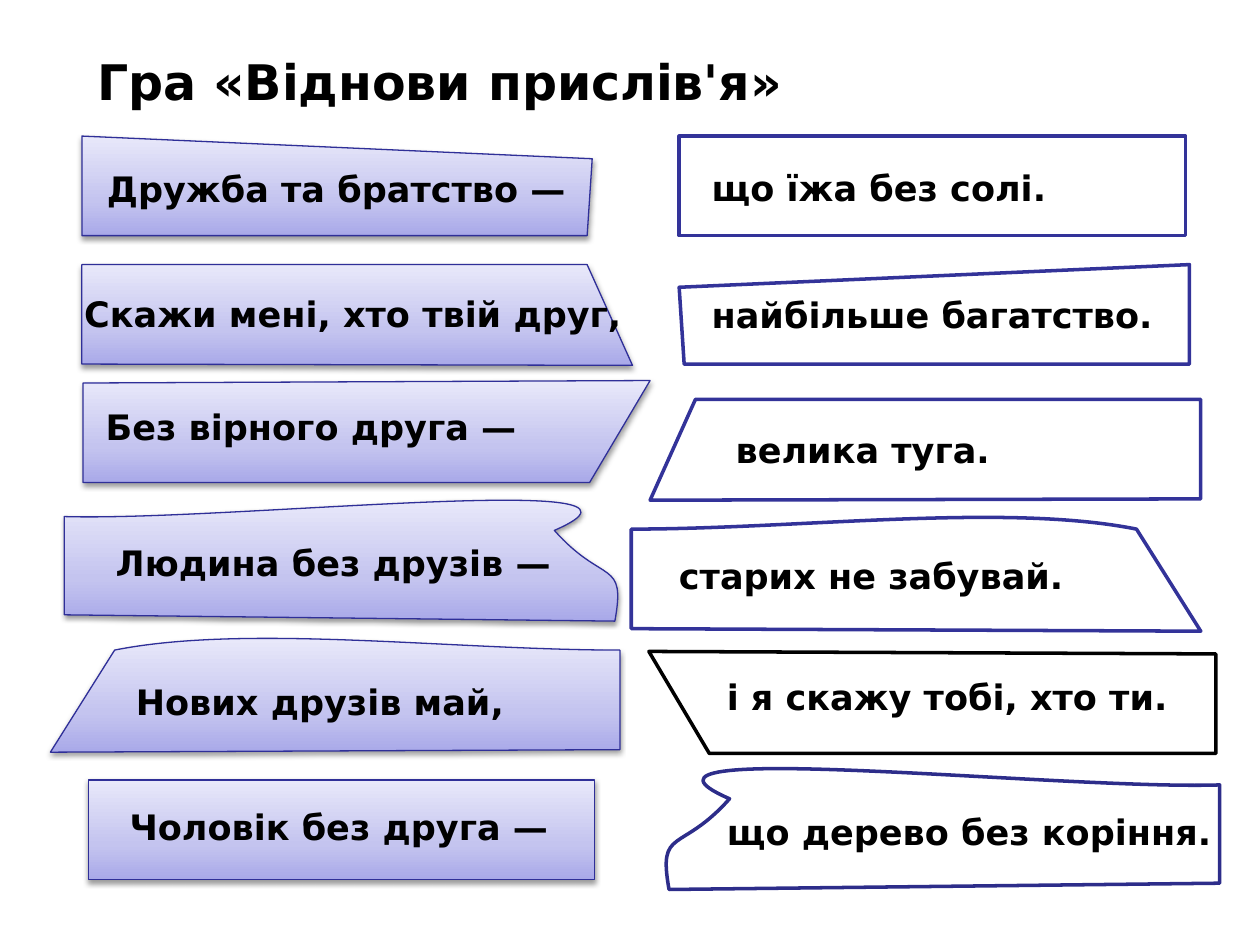
from copy import deepcopy
from dataclasses import dataclass

from lxml import etree
from pptx import Presentation
from pptx.dml.color import RGBColor as Rgb
from pptx.enum.shapes import MSO_SHAPE as Preset
from pptx.enum.text import MSO_ANCHOR as Anchor, MSO_AUTO_SIZE as AutoSize, PP_ALIGN as Align
from pptx.oxml.ns import qn
from pptx.util import Inches, Pt


@dataclass(frozen=True)
class Theme:
    font: str = "DejaVu Sans"
    title_size: int = 28
    label_size: int = 20
    black: str = "000000"
    white: str = "FFFFFF"
    start_edge: str = "2F2F98"
    end_edge: str = "333399"
    torn_edge: str = "2D2D8A"
    gradient: tuple = ((0, "A9A9E9"), (0.35, "C4C4EF"), (1, "E8E8FA"))


THEME = Theme()

# Width, height and steps of each strip, in inches; six numbers make a Bezier curve.
OUTLINES = {
    "slant_top": (4.05, 0.79, [(0, 0), (4.05, 0.18), (4.01, 0.79), (0, 0.79), (0, 0)]),
    "slant_end": (4.37, 0.8, [(0, 0), (4.01, 0), (4.37, 0.8), (0, 0.79), (0, 0)]),
    "pointed": (4.5, 0.81, [(0, 0.02), (4.5, 0), (4.02, 0.81), (0, 0.81), (0, 0.02)]),
    "torn": (4.39, 0.96, [(3.89, 0.24), (5.02, -0.25, 1.3, 0.17, 0, 0.13), (0, 0.91),
                          (4.37, 0.96), (4.46, 0.46, 4.28, 0.68, 3.89, 0.24)]),
    "wavy": (4.52, 0.9, [(4.01, 0.09), (2.96, -0.12, 1.33, 0.09, 0, 0.09), (0, 0.88),
                         (4.52, 0.9), (4.01, 0.09)]),
}
RECT_SIZE = (4.02, 0.79)
LABEL_HEIGHT = 0.44

# Outline, mirrored, strip left and top, wording, label left, top and width
STARTS = [
    ("slant_top", False, 0.65, 1.08, "Дружба та братство —", 0.75, 1.28, 3.99),
    ("slant_end", False, 0.65, 2.1, "Скажи мені, хто твій друг,", 0.57, 2.27, 4.52),
    ("pointed", False, 0.66, 3.02, "Без вірного друга —", 0.74, 3.17, 4),
    ("torn", False, 0.51, 3.97, "Людина без друзів —", 0.82, 4.25, 3.87),
    ("wavy", True, 0.4, 5.07, "Нових друзів май,", 0.98, 5.35, 3.7),
    ("rect", False, 0.7, 6.19, "Чоловік без друга —", 0.93, 6.34, 3.63),
]
ENDINGS = [
    ("rect", False, 5.39, 1.08, "що їжа без солі.", 5.55, 1.27, 3.59),
    ("slant_top", True, 5.39, 2.1, "найбільше багатство.", 5.55, 2.28, 3.86),
    ("slant_end", True, 5.16, 3.17, "велика туга.", 5.74, 3.35, 2.96),
    ("wavy", False, 5.01, 4.11, "старих не забувай.", 5.29, 4.35, 3.85),
    ("pointed", True, 5.15, 5.17, "і я скажу тобі, хто ти.", 5.67, 5.31, 3.98),
    ("torn", True, 5.29, 6.1, "що дерево без коріння.", 5.67, 6.38, 4.13),
]
ENDING_EDGES = {"pointed": THEME.black, "torn": THEME.torn_edge}


def set_place(shape, left, top, width, height):
    place = {"left": left, "top": top, "width": width, "height": height}
    for name, value in place.items():
        setattr(shape, name, Inches(value))


def bend(strip, steps, width, height):
    """Turn the line segments of six-number steps into Bezier curves."""
    path = next(strip.element.spPr.iter(qn("a:path")))
    path.set("w", str(Inches(width)))
    path.set("h", str(Inches(height)))
    for segment, step in zip(list(path), steps):
        for old_point in list(segment):
            segment.remove(old_point)
        for x, y in step:
            etree.SubElement(segment, qn("a:pt"), x=str(Inches(x)), y=str(Inches(y)))
        if len(step) == 3:
            curve = etree.Element(qn("a:cubicBezTo"))
            curve.extend(list(segment))
            path.replace(segment, curve)


def add_strip(slide, kind, mirrored, left, top):
    if kind == "rect":
        return slide.shapes.add_shape(Preset.RECTANGLE, *map(Inches, (left, top, *RECT_SIZE)))
    width, height, outline = OUTLINES[kind]
    steps = [[(width - x if mirrored else x, y) for x, y in zip(step[::2], step[1::2])]
             for step in outline]
    ends = [(Inches(left + x), Inches(top + y)) for x, y in (step[-1] for step in steps)]
    builder = slide.shapes.build_freeform(*ends[0])
    builder.add_line_segments(ends[1:], close=True)
    strip = builder.convert_to_shape()
    set_place(strip, left, top, width, height)
    bend(strip, steps, width, height)
    return strip


def set_edge(strip, colour, width):
    strip.line.color.rgb = Rgb.from_string(colour)
    strip.line.width = Pt(width)
    strip.shadow.inherit = False


def fill_gradient(strip):
    strip.fill.gradient()
    strip.fill.gradient_angle = 90
    first_stop = next(strip.element.spPr.iter(qn("a:gs")))
    first_stop.addnext(deepcopy(first_stop))
    for stop, (position, colour) in zip(strip.fill.gradient_stops, THEME.gradient):
        stop.position = position
        stop.color.rgb = Rgb.from_string(colour)


def add_shadow(strip):
    effects = strip.element.spPr.find(qn("a:effectLst"))
    shadow = etree.SubElement(effects, qn("a:outerShdw"), blurRad=str(Pt(3.1)),
                              dist=str(Pt(1.6)), dir="5400000", rotWithShape="0")
    colour = etree.SubElement(shadow, qn("a:srgbClr"), val=THEME.black)
    etree.SubElement(colour, qn("a:alpha"), val="38000")


def write(box, wording, size):
    frame = box.text_frame
    frame.text = wording
    frame_format = {"word_wrap": True, "auto_size": AutoSize.SHAPE_TO_FIT_TEXT,
                    "vertical_anchor": Anchor.TOP}
    for name, value in frame_format.items():
        setattr(frame, name, value)
    paragraph = frame.paragraphs[0]
    paragraph.alignment = Align.LEFT
    font = paragraph.runs[0].font
    for name, value in {"name": THEME.font, "size": Pt(size), "bold": True}.items():
        setattr(font, name, value)
    font.color.rgb = Rgb.from_string(THEME.black)


def add_title(slide, wording):
    title = slide.shapes.title
    set_place(title, 0.67, 0.36, 8.03, 0.57)
    write(title, wording, THEME.title_size)


def add_label(slide, wording, left, top, width):
    box = slide.shapes.add_textbox(*map(Inches, (left, top, width, LABEL_HEIGHT)))
    write(box, wording, THEME.label_size)


def add_start(slide, *outline):
    strip = add_strip(slide, *outline)
    fill_gradient(strip)
    set_edge(strip, THEME.start_edge, 0.75)
    add_shadow(strip)


def add_ending(slide, kind, *place):
    strip = add_strip(slide, kind, *place)
    strip.fill.solid()
    strip.fill.fore_color.rgb = Rgb.from_string(THEME.white)
    set_edge(strip, ENDING_EDGES.get(kind, THEME.end_edge), 2)


def main():
    deck = Presentation()
    deck.slide_width, deck.slide_height = Inches(10), Inches(7.5)
    slide = deck.slides.add_slide(deck.slide_layouts[5])
    add_title(slide, "Гра «Віднови прислів'я»")
    for start in STARTS:
        add_start(slide, *start[:4])
    for ending in ENDINGS:
        add_ending(slide, *ending[:4])
    for proverb_part in STARTS + ENDINGS:
        add_label(slide, *proverb_part[4:])
    deck.save("out.pptx")


if __name__ == "__main__":
    main()
